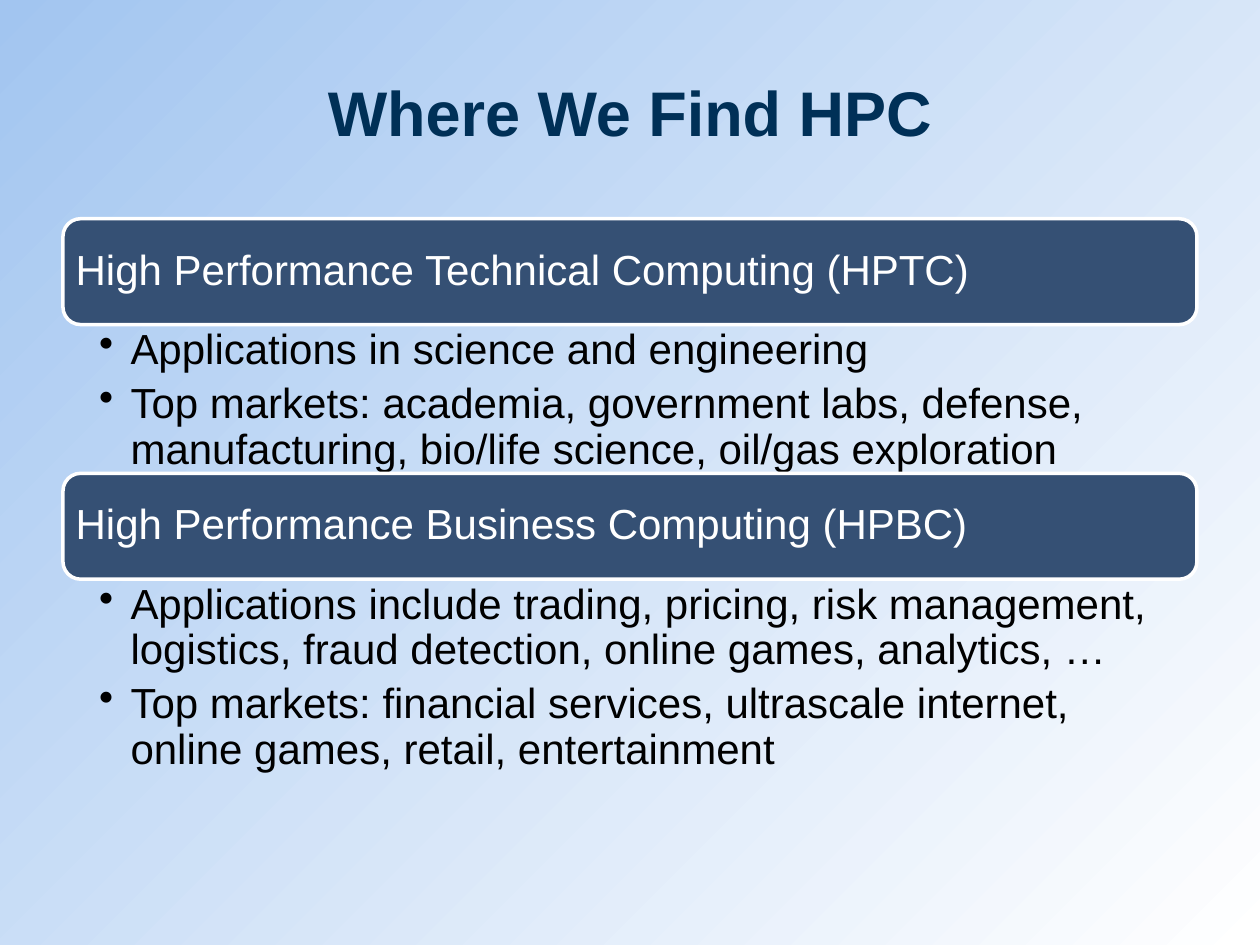
from dataclasses import dataclass

from lxml import etree
from pptx import Presentation
from pptx import util as u
from pptx.dml.color import RGBColor
from pptx.enum import shapes, text
from pptx.oxml.ns import qn

# Content: heading, its bullets, height of the bullet area
TITLE = "Where We Find HPC"
SECTIONS = [
    ("High Performance Technical Computing (HPTC)", [
        "Applications in science and engineering",
        "Top markets: academia, government labs, defense, "
        "manufacturing, bio/life science, oil/gas exploration",
    ], 85),
    ("High Performance Business Computing (HPBC)", [
        "Applications include trading, pricing, risk management, "
        "logistics, fraud detection, online games, analytics, …",
        "Top markets: financial services, ultrascale internet, "
        "online games, retail, entertainment",
    ], 110),
]


@dataclass(frozen=True)
class Theme:
    font: str = "Arial"
    title_size: float = 36
    body_size: float = 24
    title: str = "003057"
    bar: str = "355074"
    white: str = "FFFFFF"
    body: str = "000000"
    sky: str = "A2C5F0"


THEME = Theme()
LEFT, WIDTH = 36, 648
TITLE_TOP, TITLE_HEIGHT = 31, 65
BARS_TOP, BAR_HEIGHT = 125, 60.5
INDENT = 18


def add_bullet(paragraph):
    properties = paragraph._p.get_or_add_pPr()
    properties.set("marL", str(u.Pt(INDENT)))
    properties.set("indent", str(-u.Pt(INDENT)))
    etree.SubElement(properties, qn("a:buChar")).set("char", "•")


def write(shape, lines, *, color, size=THEME.body_size, bold=False,
          align=text.PP_ALIGN.LEFT, anchor=text.MSO_ANCHOR.MIDDLE,
          margins=(7.2, 3.6, 7.2, 3.6), spacing=0.9, after=0, bullets=False):
    frame = shape.text_frame
    frame.word_wrap = True
    frame.vertical_anchor = anchor
    (frame.margin_left, frame.margin_top,
     frame.margin_right, frame.margin_bottom) = map(u.Pt, margins)
    for index, line in enumerate(lines):
        paragraph = frame.add_paragraph() if index else frame.paragraphs[0]
        if bullets:
            add_bullet(paragraph)
        paragraph.alignment = align
        paragraph.line_spacing = spacing
        paragraph.space_after = u.Pt(after)
        run = paragraph.add_run()
        run.text = line
        run.font.name = THEME.font
        run.font.size = u.Pt(size)
        run.font.bold = bold
        run.font.color.rgb = RGBColor.from_string(color)


def add_box(slide, top, height):
    return slide.shapes.add_textbox(*map(u.Pt, (LEFT, top, WIDTH, height)))


def add_bar(slide, top):
    shape = slide.shapes.add_shape(
        shapes.MSO_SHAPE.ROUNDED_RECTANGLE,
        *map(u.Pt, (LEFT, top, WIDTH, BAR_HEIGHT)))
    shape.shadow.inherit = False
    shape.fill.solid()
    shape.fill.fore_color.rgb = RGBColor.from_string(THEME.bar)
    shape.line.color.rgb = RGBColor.from_string(THEME.white)
    shape.line.width = u.Pt(2)
    return shape


def main():
    presentation = Presentation()
    presentation.slide_width, presentation.slide_height = u.Pt(720), u.Pt(540)
    slide = presentation.slides.add_slide(presentation.slide_layouts[6])

    # Background: diagonal fade from top left to bottom right
    fill = slide.background.fill
    fill.gradient()
    fill.gradient_angle = 315
    for stop, color in zip(fill.gradient_stops, (THEME.sky, THEME.white)):
        stop.color.rgb = RGBColor.from_string(color)

    # Title
    write(add_box(slide, TITLE_TOP, TITLE_HEIGHT), [TITLE], color=THEME.title,
          size=THEME.title_size, bold=True, align=text.PP_ALIGN.CENTER,
          spacing=1.0)

    # Heading bars, each followed by its bullets
    top = BARS_TOP
    for heading, bullets, height in SECTIONS:
        write(add_bar(slide, top), [heading], color=THEME.white,
              margins=(4.3, 4.3, 4.3, 4.3))
        top += BAR_HEIGHT
        write(add_box(slide, top, height), bullets, color=THEME.body,
              anchor=text.MSO_ANCHOR.TOP, margins=(20.6, 2.2, 13.7, 2.2),
              after=5, bullets=True)
        top += height

    presentation.save("out.pptx")


if __name__ == "__main__":
    main()
